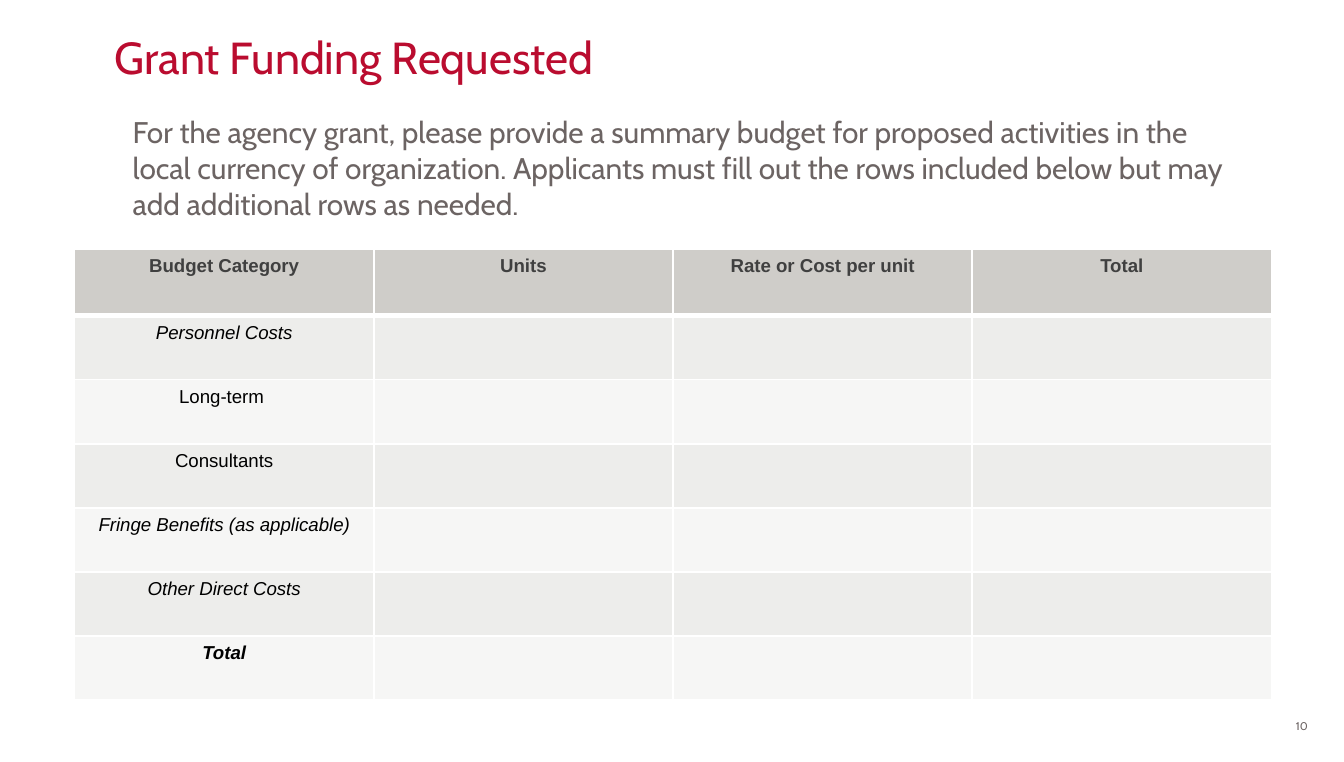
from dataclasses import dataclass

import pptx
import pptx.dml.color
import pptx.enum.text
import pptx.oxml
import pptx.oxml.ns
import pptx.util

Pt = pptx.util.Pt
Align = pptx.enum.text.PP_ALIGN
Anchor = pptx.enum.text.MSO_ANCHOR


@dataclass(frozen=True)
class Theme:
    heading_font: str = "Cabin"
    table_font: str = "Arial"
    red: str = "BA0C2F"
    grey: str = "6C6463"
    header_text: str = "404040"
    black: str = "000000"
    rule: str = "FFFFFF"
    header_fill: str = "CFCDC9"
    band_fills: tuple[str, str] = ("EDEDEB", "F6F6F5")
    title_size: float = 24
    body_size: float = 16
    table_size: float = 10
    number_size: float = 6


THEME = Theme()


@dataclass(frozen=True)
class TextBlock:
    text: str
    left: float
    top: float
    width: float
    height: float
    size: float
    color: str
    anchor: Anchor = Anchor.TOP
    align: Align = Align.LEFT
    indent: float = 0


@dataclass(frozen=True)
class BudgetRow:
    label: str
    bold: bool = False
    italic: bool = False


BLOCKS = [
    TextBlock("10", 540, 381.6, 167.76, 14.4, THEME.number_size, THEME.grey,
              Anchor.MIDDLE, Align.RIGHT),
    TextBlock("Grant Funding Requested", 54.4, 12.24, 612, 36, THEME.title_size,
              THEME.red, Anchor.BOTTOM),
    TextBlock("For the agency grant, please provide a summary budget for proposed "
              "activities in the local currency of organization. Applicants must "
              "fill out the rows included below but may add additional rows as "
              "needed.", 54, 57.6, 612, 252, THEME.body_size, THEME.grey, indent=10),
]
HEADINGS = ["Budget Category", "Units", "Rate or Cost per unit", "Total"]
ROWS = [
    BudgetRow("Personnel Costs", italic=True),
    BudgetRow("Long-term\u00a0".replace("\u00a0", " ")),
    BudgetRow("Consultants"),
    BudgetRow("Fringe Benefits (as applicable)", italic=True),
    BudgetRow("Other Direct Costs", italic=True),
    BudgetRow("Total", bold=True, italic=True),
]
TABLE_LEFT, TABLE_TOP = 39.9, 133.5
COLUMN_WIDTH, HEADER_HEIGHT, ROW_HEIGHT = 160.3, 35.6, 34.35
THIN, THICK = 1, 3


def rgb(color: str) -> pptx.dml.color.RGBColor:
    return pptx.dml.color.RGBColor.from_string(color)


def write(para, text: str, color: str, **formats) -> None:
    """Add one run, with its font attributes taken from formats."""
    span = para.add_run()
    span.text = text
    for name, value in formats.items():
        setattr(span.font, name, value)
    span.font.color.rgb = rgb(color)


def draw_block(page, block: TextBlock) -> None:
    box = page.shapes.add_textbox(
        *map(Pt, (block.left, block.top, block.width, block.height)))
    frame = box.text_frame
    for name, value in {"word_wrap": True, "vertical_anchor": block.anchor}.items():
        setattr(frame, name, value)
    para = frame.paragraphs[0]
    para.alignment = block.align
    if block.indent:
        properties = para._p.get_or_add_pPr()
        properties.set("marL", str(Pt(block.indent)))
        properties.set("indent", "0")
    write(para, block.text, block.color, name=THEME.heading_font, size=Pt(block.size))


def set_borders(cell, top: float, bottom: float) -> None:
    widths = {"lnL": THIN, "lnR": THIN, "lnT": top, "lnB": bottom}
    for side, width in widths.items():
        cell._tc.get_or_add_tcPr().append(pptx.oxml.parse_xml(
            f'<a:{side} {pptx.oxml.ns.nsdecls("a")} w="{Pt(width)}"><a:solidFill>'
            f'<a:srgbClr val="{THEME.rule}"/></a:solidFill></a:{side}>'))


def draw_cell(cell, row: int, text: str, color: str, fill: str,
              bold: bool, italic: bool) -> None:
    # Borders precede the fill in the cell's XML.
    set_borders(cell, THICK if row == 1 else THIN, THICK if row == 0 else THIN)
    cell.fill.solid()
    cell.fill.fore_color.rgb = rgb(fill)
    para = cell.text_frame.paragraphs[0]
    para.alignment = Align.CENTER
    para.font.size = Pt(THEME.table_size)
    if text:
        write(para, text, color, name=THEME.table_font, size=Pt(THEME.table_size),
              bold=bold, italic=italic)


def draw_table(page, headings: list[str], rows: list[BudgetRow]) -> None:
    table = page.shapes.add_table(
        len(rows) + 1, len(headings), Pt(TABLE_LEFT), Pt(TABLE_TOP),
        Pt(COLUMN_WIDTH * len(headings)),
        Pt(HEADER_HEIGHT + ROW_HEIGHT * len(rows))).table
    for column, heading in enumerate(headings):
        table.columns[column].width = Pt(COLUMN_WIDTH)
        draw_cell(table.cell(0, column), 0, heading, THEME.header_text,
                  THEME.header_fill, True, False)
    table.rows[0].height = Pt(HEADER_HEIGHT)
    for index, row in enumerate(rows, start=1):
        table.rows[index].height = Pt(ROW_HEIGHT)
        for column in range(len(headings)):
            draw_cell(table.cell(index, column), index,
                      row.label if column == 0 else "", THEME.black,
                      THEME.band_fills[(index - 1) % 2], row.bold, row.italic)


def main() -> None:
    deck = pptx.Presentation()
    deck.slide_width, deck.slide_height = Pt(720), Pt(408.24)
    page = deck.slides.add_slide(deck.slide_layouts[6])
    for block in BLOCKS:
        draw_block(page, block)
    draw_table(page, HEADINGS, ROWS)
    deck.save("out.pptx")


if __name__ == "__main__":
    main()
